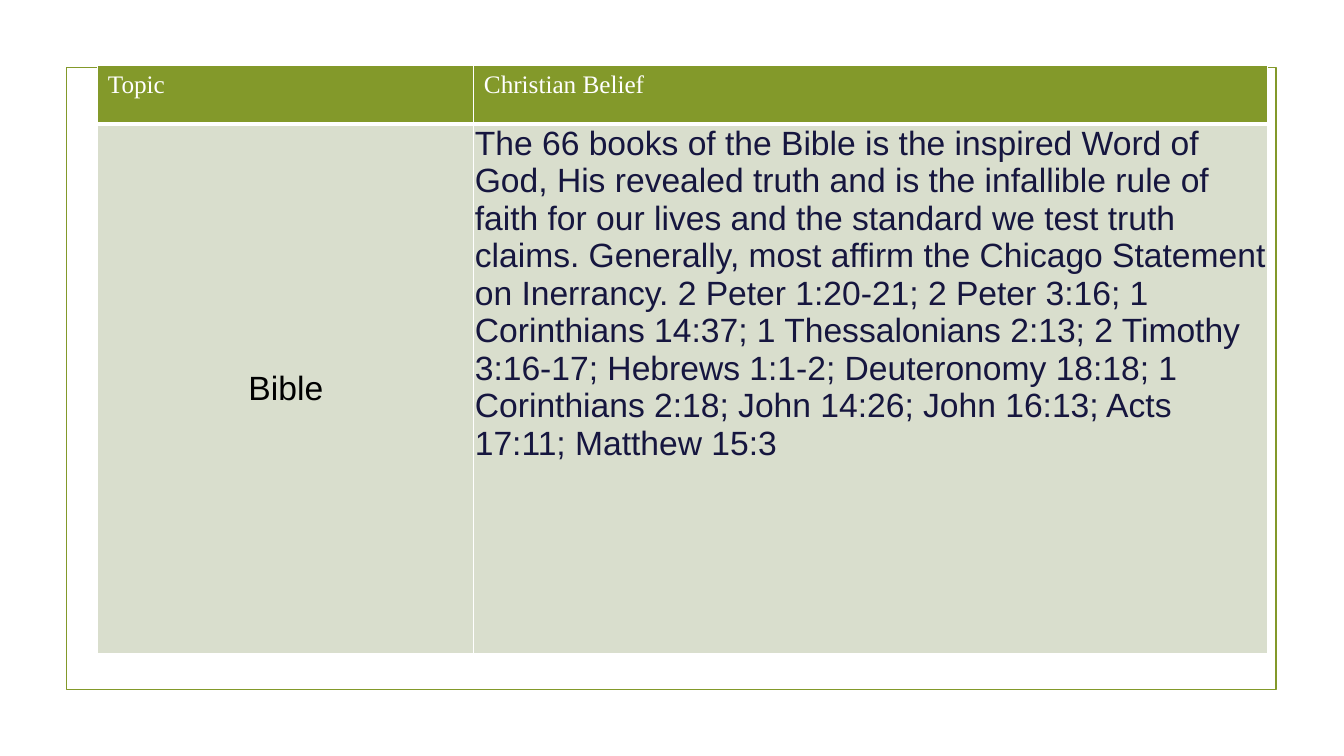
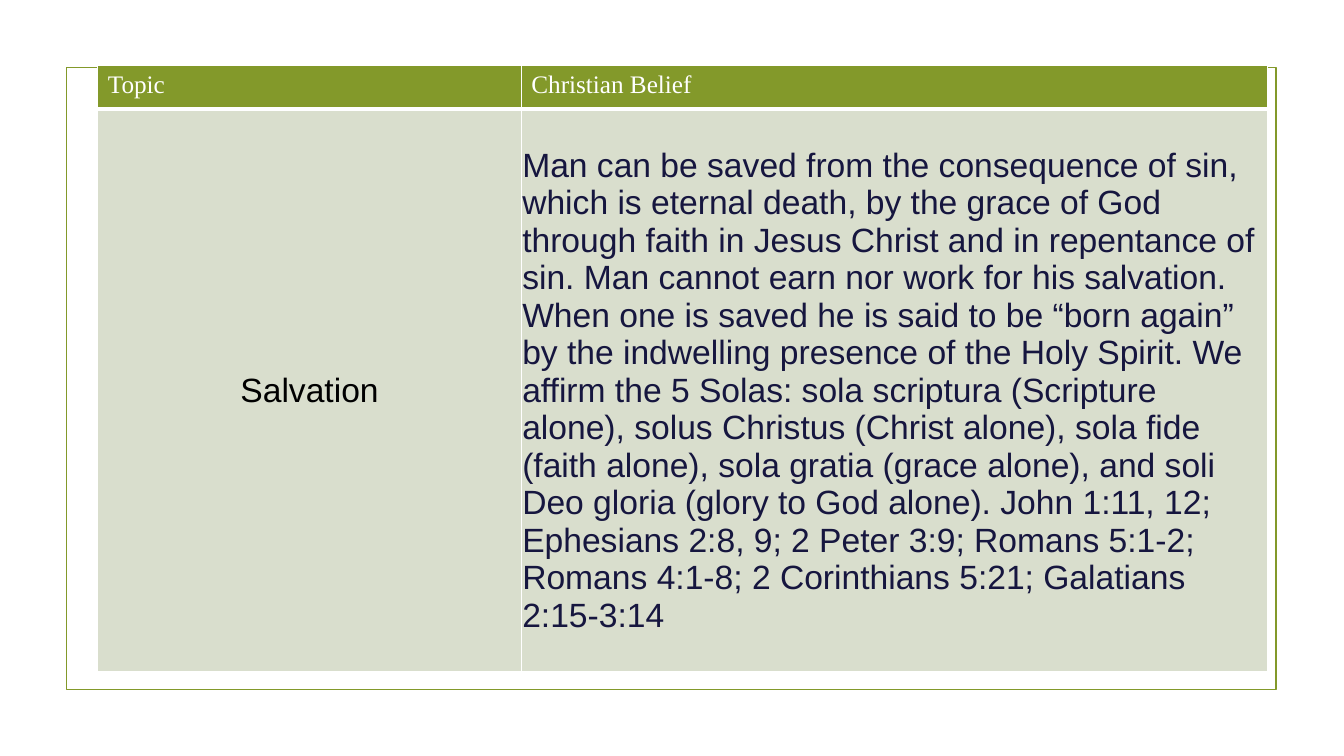
from lxml.etree import SubElement
from pptx import Presentation
from pptx.dml.color import RGBColor
from pptx.enum.shapes import MSO_SHAPE
from pptx.enum.text import MSO_ANCHOR, PP_ALIGN
from pptx.oxml.ns import qn
from pptx.util import Inches, Pt

COLORS = {
    "olive": "83992A",
    "sage": "D9DECD",
    "white": "FFFFFF",
    "black": "000000",
    "navy": "16163F",
}
SLIDE_WIDTH, SLIDE_HEIGHT = 13.33, 7.5
FRAME = (0.66, 0.67, 12, 6.17)
TABLE_LEFT, TABLE_TOP, TABLE_WIDTH = 0.97, 0.65, 11.6
HEADINGS = ("Topic", "Christian Belief")
BODY_INSETS = (0.01, 0.01, 0.01, 0)

BELIEFS = [
    {
        "topic": "Bible",
        "belief": (
            "The 66 books of the Bible is the inspired Word of God, His revealed truth "
            "and is the infallible rule of faith for our lives and the standard we test "
            "truth claims. Generally, most affirm the Chicago Statement on Inerrancy. "
            "2 Peter 1:20-21; 2 Peter 3:16; 1 Corinthians 14:37; 1 Thessalonians 2:13; "
            "2 Timothy 3:16-17; Hebrews 1:1-2; Deuteronomy 18:18; 1 Corinthians 2:18; "
            "John 14:26; John 16:13; Acts 17:11; Matthew 15:3"
        ),
        "topic_width": 3.73,
        "row_heights": (0.58, 5.25),
        "anchor": MSO_ANCHOR.TOP,
    },
    {
        "topic": "Salvation",
        "belief": (
            "Man can be saved from the consequence of sin, which is eternal death, by the "
            "grace of God through faith in Jesus Christ and in repentance of sin. Man "
            "cannot earn nor work for his salvation. When one is saved he is said to be "
            "“born again” by the indwelling presence of the Holy Spirit. We affirm the 5 "
            "Solas: sola scriptura (Scripture alone), solus Christus (Christ alone), sola "
            "fide (faith alone), sola gratia (grace alone), and soli Deo gloria (glory to "
            "God alone). John 1:11, 12; Ephesians 2:8, 9; 2 Peter 3:9; Romans 5:1-2; "
            "Romans 4:1-8; 2 Corinthians 5:21; Galatians 2:15-3:14"
        ),
        "topic_width": 4.2,
        "row_heights": (0.43, 5.58),
        "anchor": MSO_ANCHOR.MIDDLE,
    },
]


def color(name):
    return RGBColor.from_string(COLORS[name])


def write_text(frame, text, font="Arial", size=24, ink="black", align=PP_ALIGN.LEFT):
    para = frame.paragraphs[0]
    para.alignment = align
    span = para.add_run()
    span.text = text
    span.font.name = font
    span.font.size = Pt(size)
    span.font.color.rgb = color(ink)


def add_frame(page):
    box = page.shapes.add_shape(MSO_SHAPE.RECTANGLE, *map(Inches, FRAME))
    box.shadow.inherit = False
    box.fill.background()
    box.line.color.rgb = color("olive")
    box.line.width = Pt(1.25)


def set_borders(cell, bottom=1):
    properties = cell._tc.get_or_add_tcPr()
    widths = {"a:lnL": 1, "a:lnR": 1, "a:lnT": 1, "a:lnB": bottom}
    for position, (side, width) in enumerate(widths.items()):
        line = SubElement(properties, qn(side), w=str(Pt(width)))
        fill = SubElement(line, qn("a:solidFill"))
        SubElement(fill, qn("a:srgbClr"), val=COLORS["white"])
        properties.insert(position, line)


def fill_cell(cell, text, fill, bottom=1, insets=None, anchor=MSO_ANCHOR.TOP, **style):
    cell.fill.solid()
    cell.fill.fore_color.rgb = color(fill)
    cell.vertical_anchor = anchor
    if insets:
        (cell.margin_left, cell.margin_top,
         cell.margin_right, cell.margin_bottom) = map(Inches, insets)
    set_borders(cell, bottom)
    write_text(cell.text_frame, text, **style)


def add_belief_table(page, topic, belief, topic_width, row_heights, anchor):
    area = (TABLE_LEFT, TABLE_TOP, TABLE_WIDTH, sum(row_heights))
    table = page.shapes.add_table(2, 2, *map(Inches, area)).table
    table.horz_banding = False
    for column, width in zip(table.columns, (topic_width, TABLE_WIDTH - topic_width)):
        column.width = Inches(width)
    for row, height in zip(table.rows, row_heights):
        row.height = Inches(height)
    for index, heading in enumerate(HEADINGS):
        fill_cell(table.cell(0, index), heading, "olive", bottom=3,
                  font="Times New Roman", size=18, ink="white")
    fill_cell(table.cell(1, 0), topic, "sage", insets=BODY_INSETS,
              anchor=MSO_ANCHOR.MIDDLE, align=PP_ALIGN.CENTER)
    fill_cell(table.cell(1, 1), belief, "sage", insets=BODY_INSETS,
              anchor=anchor, ink="navy")


def main():
    deck = Presentation()
    deck.slide_width = Inches(SLIDE_WIDTH)
    deck.slide_height = Inches(SLIDE_HEIGHT)
    blank_layout = deck.slide_layouts.get_by_name("Blank")
    for content in BELIEFS:
        page = deck.slides.add_slide(blank_layout)
        add_frame(page)
        add_belief_table(page, **content)
    deck.save("out.pptx")


if __name__ == "__main__":
    main()
